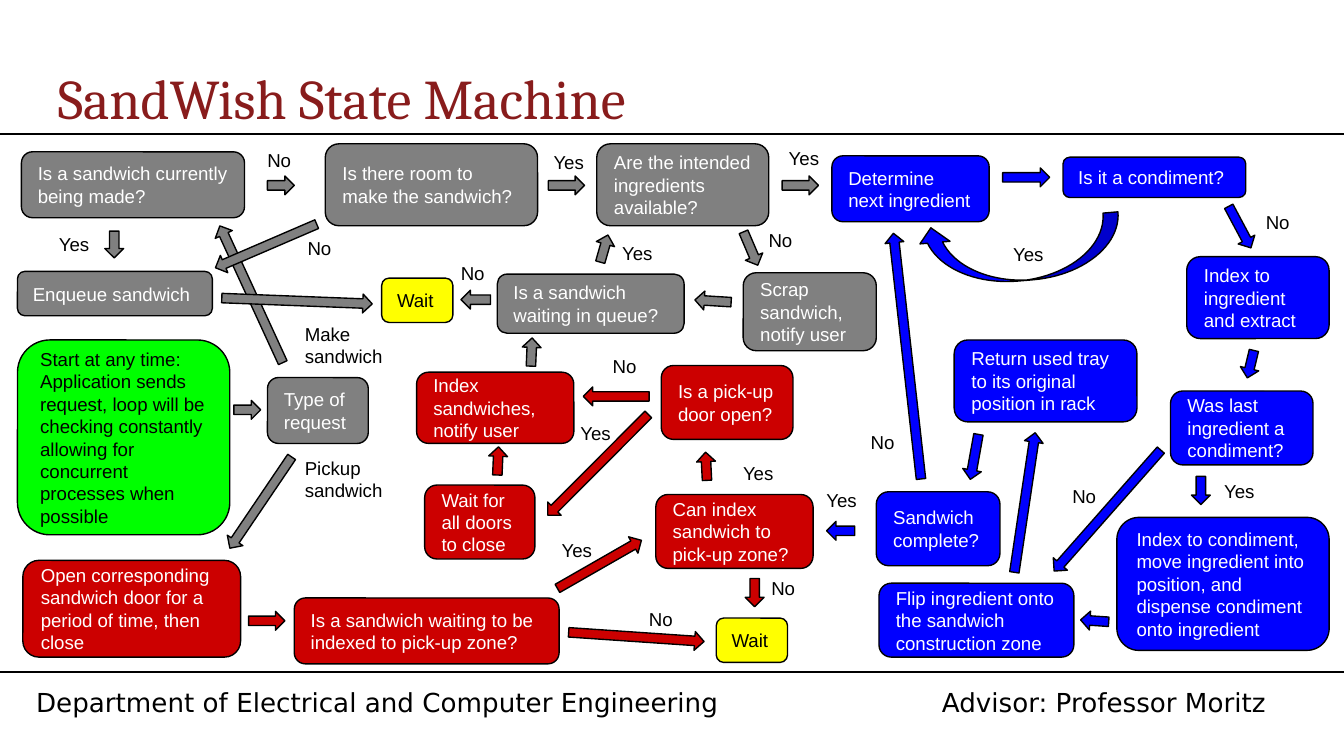
from dataclasses import dataclass
from lxml import etree
from pptx import Presentation, util as u
from pptx.dml.color import RGBColor
from pptx.enum import shapes, text
from pptx.oxml.ns import qn

HUES = {
    "gray": "808080", "blue": "0000FF", "red": "CC0000", "lime": "00FF00",
    "gold": "FFFF00", "black": "000000", "white": "FFFFFF", "wine": "881C1C",
}
KIND = shapes.MSO_SHAPE


@dataclass
class Node:
    left: float
    top: float
    wide: float
    high: float
    words: str


@dataclass
class Arrow:
    left: float
    top: float
    wide: float
    turn: float
    high: float = 0.14
    kind: shapes.MSO_SHAPE = KIND.RIGHT_ARROW


@dataclass
class Label:
    left: float
    top: float
    words: str
    wide: float = 0.48
    high: float = 0.27


NODES = {
    "gray": [
        Node(0.16, 1.13, 1.66, 0.49, "Is a sandwich currently being made?"),
        Node(2.42, 1.07, 1.58, 0.61, "Is there room to make the sandwich?"),
        Node(4.44, 1.07, 1.28, 0.61, "Are the intended ingredients available?"),
        Node(0.13, 2.02, 1.45, 0.33, "Enqueue sandwich"),
        Node(3.7, 2.04, 1.39, 0.44, "Is a sandwich waiting in queue?"),
        Node(5.53, 2.03, 0.99, 0.58, "Scrap sandwich, notify user"),
        Node(1.99, 2.81, 0.75, 0.49, "Type of request"),
    ],
    "blue": [
        Node(6.19, 1.16, 1.17, 0.49, "Determine next ingredient"),
        Node(7.91, 1.17, 1.36, 0.3, "Is it a condiment?"),
        Node(8.83, 1.91, 1.06, 0.61, "Index to ingredient and extract"),
        Node(7.1, 2.53, 1.36, 0.61, "Return used tray to its original position in rack"),
        Node(8.71, 2.91, 1.06, 0.55, "Was last ingredient a condiment?"),
        Node(6.52, 3.66, 0.92, 0.55, "Sandwich complete?"),
        Node(8.31, 3.85, 1.58, 0.99, "Index to condiment, move ingredient into position, "
             "and dispense condiment onto ingredient"),
        Node(6.54, 4.34, 1.45, 0.55, "Flip ingredient onto the sandwich construction zone"),
    ],
    "red": [
        Node(3.1, 2.77, 1.17, 0.53, "Index sandwiches, notify user"),
        Node(4.92, 2.72, 0.98, 0.55, "Is a pick-up door open?"),
        Node(3.16, 3.61, 0.82, 0.55, "Wait for all doors to close"),
        Node(4.88, 3.68, 1.17, 0.55, "Can index sandwich to pick-up zone?"),
        Node(0.17, 4.17, 1.62, 0.72, "Open corresponding sandwich door for a period of time, then close"),
        Node(2.19, 4.45, 1.97, 0.49, "Is a sandwich waiting to be indexed to pick-up zone?"),
    ],
    "lime": [
        Node(0.13, 2.53, 1.58, 1.45, "Start at any time: Application sends request, loop will be "
             "checking constantly allowing for concurrent processes when possible"),
    ],
    "gold": [
        Node(2.84, 2.07, 0.53, 0.33, "Wait"),
        Node(5.33, 4.6, 0.53, 0.33, "Wait"),
    ],
}

ARROWS = {
    "gray": [
        Arrow(1.53, 3.67, 0.82, 124.1), Arrow(1.31, 2.12, 1.12, 245.3),
        Arrow(1.74, 2.98, 0.2, 0), Arrow(0.75, 1.75, 0.2, 90),
        Arrow(1.99, 1.31, 0.2, 0), Arrow(1.57, 1.76, 0.82, 156.7),
        Arrow(4.08, 1.31, 0.27, 0), Arrow(5.45, 1.78, 0.27, 66.9),
        Arrow(5.82, 1.31, 0.27, 0), Arrow(4.39, 1.78, 0.21, 285.8),
        Arrow(3.85, 2.55, 0.21, 272.3), Arrow(3.43, 2.16, 0.22, 180),
        Arrow(5.17, 2.17, 0.27, 183.5), Arrow(1.65, 2.17, 1.12, 2.2),
    ],
    "blue": [
        Arrow(7.36, 1.11, 0.45, 85.1, 1.51, KIND.CURVED_LEFT_ARROW),
        Arrow(7.46, 1.25, 0.35, 0), Arrow(9.05, 1.62, 0.35, 61.9),
        Arrow(8.83, 3.58, 0.21, 90), Arrow(7.64, 3.73, 1.2, 131.4),
        Arrow(9.2, 2.64, 0.21, 103.5), Arrow(7.1, 3.67, 1.05, 278.5),
        Arrow(7.08, 3.33, 0.34, 100.2), Arrow(5.83, 2.58, 1.84, 263.6),
        Arrow(8.04, 4.55, 0.21, 183.9), Arrow(6.15, 3.88, 0.21, 180),
    ],
    "red": [
        Arrow(5.51, 4.34, 0.21, 90), Arrow(1.85, 4.55, 0.27, 0),
        Arrow(4.23, 4.67, 1.01, 3.9), Arrow(5.15, 3.4, 0.21, 267.1),
        Arrow(4.1, 4.13, 0.72, 330.2), Arrow(3.92, 3.39, 1.06, 134.9),
        Arrow(4.34, 2.88, 0.49, 180), Arrow(3.6, 3.36, 0.21, 272.3),
    ],
}

SPOTS = {
    "Yes": [(7.44, 1.71), (9.01, 3.47), (0.34, 1.63), (4.02, 1.02), (5.77, 0.99), (6.05, 3.54),
            (5.43, 3.34), (4.08, 3.91), (4.22, 3.04), (4.53, 1.7)],
    "No": [(9.32, 1.47), (7.88, 3.51), (1.89, 1.01), (2.19, 1.66), (5.62, 1.6), (6.38, 3.11),
           (5.64, 4.19), (4.73, 4.42), (4.46, 2.54), (3.33, 1.85)],
}
LABELS = [Label(x, y, word) for word, spots in SPOTS.items() for x, y in spots]
LABELS += [Label(2.17, 3.3, "Pickup sandwich", 0.87, 0.44),
           Label(2.17, 2.3, "Make sandwich", 0.87, 0.44)]


def cm(inch: float) -> u.Length:
    return u.Cm(inch * 2.54)


def tint(hue: str) -> RGBColor:
    return RGBColor.from_string(HUES[hue])


def write(shape, words: str, hue: str, size: float = 10, font: str = "Arial",
          pad: float = 0.1, mid: bool = False) -> None:
    frame = shape.text_frame
    frame.text = words
    frame.word_wrap = True
    frame.auto_size = text.MSO_AUTO_SIZE.NONE
    frame.vertical_anchor = text.MSO_ANCHOR.MIDDLE if mid else text.MSO_ANCHOR.TOP
    frame.margin_left = frame.margin_right = cm(0.1)
    frame.margin_top = frame.margin_bottom = cm(pad)
    for para in frame.paragraphs:
        para.alignment = text.PP_ALIGN.LEFT
        for run in para.runs:
            run.font.size = u.Pt(size)
            run.font.name = font
            run.font.color.rgb = tint(hue)


def add_shape(slide, kind: shapes.MSO_SHAPE, item: Node | Arrow, hue: str):
    shape = slide.shapes.add_shape(kind, cm(item.left), cm(item.top), cm(item.wide), cm(item.high))
    shape.shadow.inherit = False
    shape.fill.solid()
    shape.fill.fore_color.rgb = tint(hue)
    shape.line.color.rgb = tint("black")
    shape.line.width = u.Pt(0.75)
    return shape


def add_label(slide, label: Label):
    return slide.shapes.add_textbox(cm(label.left), cm(label.top), cm(label.wide), cm(label.high))


def add_rule(slide, top: float) -> None:
    rule = slide.shapes.add_connector(shapes.MSO_CONNECTOR.STRAIGHT, 0, cm(top), cm(10), cm(top))
    rule.line.color.rgb = tint("black")
    rule.line.width = u.Pt(1)
    etree.SubElement(rule._element.spPr, qn("a:effectLst"))


def add_foot(slide) -> None:
    foot = Label(0.17, 5.06, "Department of Electrical and Computer Engineering\tAdvisor: Professor Moritz",
                 9.67, 0.25)
    box = add_label(slide, foot)
    write(box, foot.words, "black", 14, "DejaVu Sans", 0.05)
    tabs = etree.SubElement(box.text_frame.paragraphs[0]._p.get_or_add_pPr(), qn("a:tabLst"))
    etree.SubElement(tabs, qn("a:tab"), pos=str(cm(6.74)), algn="l")


def main() -> None:
    deck = Presentation()
    deck.slide_width, deck.slide_height = u.Cm(25.4), u.Cm(14.29)
    slide = deck.slides.add_slide(deck.slide_layouts[5])
    for top in (1, 5):
        add_rule(slide, top)
    add_foot(slide)
    title = slide.shapes.title
    title.left, title.top, title.width, title.height = cm(0.33), cm(0.5), cm(9.67), cm(0.44)
    write(title, "SandWish State Machine", "wine", 30, "Cambria", 0.05, True)
    for hue, nodes in NODES.items():
        for node in nodes:
            shape = add_shape(slide, KIND.ROUNDED_RECTANGLE, node, hue)
            write(shape, node.words, "black" if hue in ("lime", "gold") else "white", mid=True)
    for hue, arrows in ARROWS.items():
        for arrow in arrows:
            add_shape(slide, arrow.kind, arrow, hue).rotation = arrow.turn
    for label in LABELS:
        write(add_label(slide, label), label.words, "black")
    deck.save("out.pptx")


if __name__ == "__main__":
    main()
